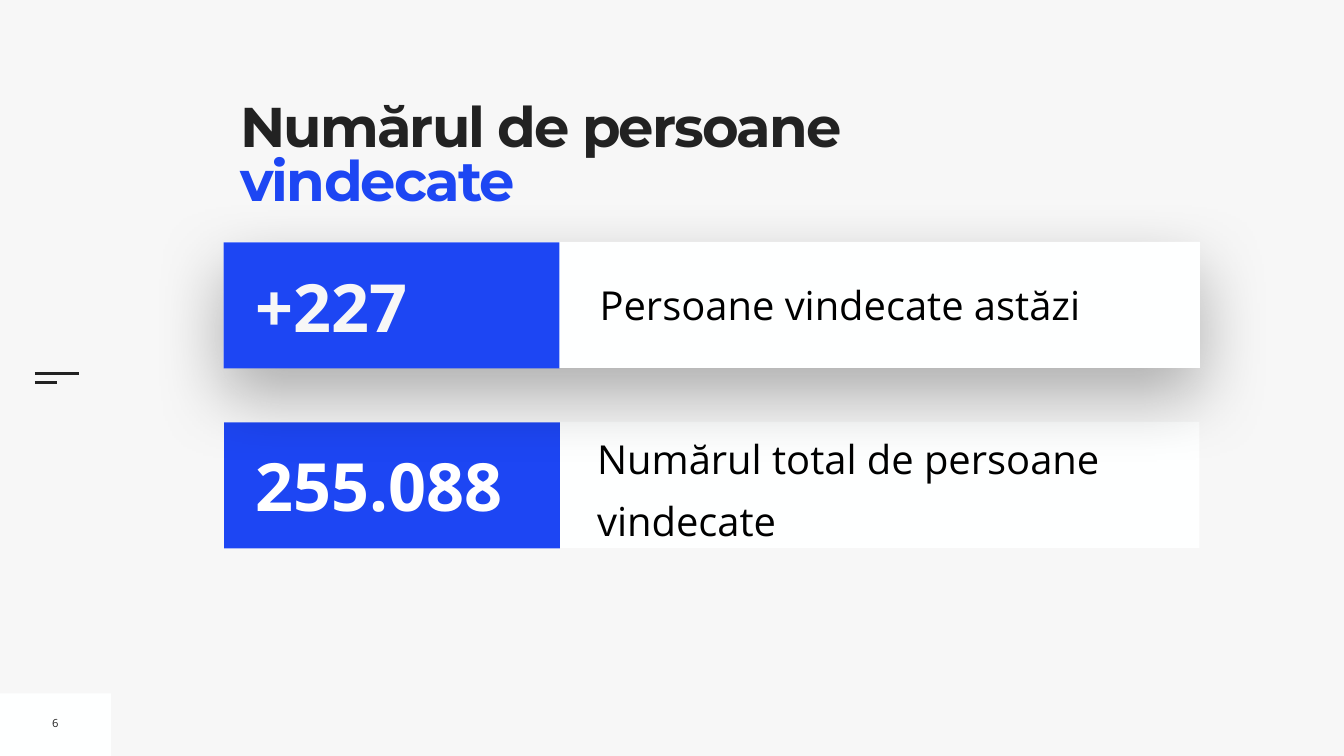
from lxml.etree import SubElement
from pptx import Presentation
from pptx.dml.color import RGBColor
from pptx.enum.shapes import MSO_CONNECTOR, MSO_SHAPE
from pptx.enum.text import MSO_ANCHOR, PP_ALIGN
from pptx.oxml.ns import qn
from pptx.util import Inches, Pt

COLORS = {
    "background": "F7F7F7",
    "white": "FFFFFF",
    "card": "FEFFFF",
    "accent": "1D46F3",
    "dark": "222222",
    "black": "000000",
}


def color(name):
    return RGBColor.from_string(COLORS[name])


def write_text(frame, runs, size, font="Open Sans", bold=False, align=PP_ALIGN.LEFT,
               anchor=MSO_ANCHOR.MIDDLE, inset=0.1, wrap=True, line_spacing=None,
               space_before=None, letter_spacing=None):
    """Fill a text frame with (text, colour name) runs in one format."""
    frame.word_wrap = wrap
    frame.vertical_anchor = anchor
    frame.margin_left = frame.margin_right = Inches(inset)
    frame.margin_top = frame.margin_bottom = Inches(inset)
    paragraph = frame.paragraphs[0]
    paragraph.alignment = align
    if line_spacing:
        paragraph.line_spacing = line_spacing
    if space_before:
        paragraph.space_before = Pt(space_before)
    for text, color_name in runs:
        run = paragraph.add_run()
        run.text = text
        run.font.name = font
        run.font.size = Pt(size)
        run.font.bold = bold
        run.font.color.rgb = color(color_name)
        if letter_spacing:
            run._r.get_or_add_rPr().set("spc", str(round(letter_spacing * 100)))


class SlideBuilder:
    """Draws the elements of the report on the current slide."""

    def __init__(self, slide):
        self.slide = slide
        fill = slide.background.fill
        fill.solid()
        fill.fore_color.rgb = color("background")

    def box(self, left, top, width, height, fill, shadow=False):
        """Add a borderless rectangle, with a soft shadow on request."""
        shape = self.slide.shapes.add_shape(
            MSO_SHAPE.RECTANGLE, Inches(left), Inches(top), Inches(width), Inches(height))
        shape.shadow.inherit = False
        shape.fill.solid()
        shape.fill.fore_color.rgb = color(fill)
        shape.line.fill.background()
        if shadow:
            effects = shape._element.spPr.find(qn("a:effectLst"))
            outer = SubElement(effects, qn("a:outerShdw"), blurRad=str(Pt(100)),
                               dist=str(Pt(40)), dir="5400000", rotWithShape="0")
            shade = SubElement(outer, qn("a:srgbClr"), val=COLORS["black"])
            SubElement(shade, qn("a:alpha"), val="30000")
        return shape

    def text(self, left, top, width, height, runs, size, **style):
        """Add a text box."""
        shape = self.slide.shapes.add_textbox(
            Inches(left), Inches(top), Inches(width), Inches(height))
        write_text(shape.text_frame, runs, size, **style)

    def rule(self, left, top, length):
        """Add a horizontal line."""
        line = self.slide.shapes.add_connector(
            MSO_CONNECTOR.STRAIGHT, Inches(left), Inches(top), Inches(left + length), Inches(top))
        line.line.color.rgb = color("dark")
        line.line.width = Pt(3)
        SubElement(line._element.spPr, qn("a:effectLst"))

    def title(self, runs):
        """Add the filled title block."""
        shape = self.box(4.77, 2.07, 13.01, 2.73, "background")
        write_text(shape.text_frame, runs, 80, font="Montserrat", bold=True, inset=0,
                   anchor=MSO_ANCHOR.TOP, line_spacing=0.8, letter_spacing=-2.7)

    def card(self, left, top, width, value, value_color, label, label_area,
             shadow=False, **label_style):
        """Add a white card with a value on the accent panel and a label."""
        self.box(left, top, width, 2.5, "card", shadow)
        self.text(*label_area, [(label, "black")], 57, **label_style)
        self.box(left, top + 0.01, 6.66, 2.5, "accent")
        self.text(left + 0.53, top + 0.36, 6.03, 1.8, [(value, value_color)], 95, bold=True)


def main():
    presentation = Presentation()
    presentation.slide_width = Inches(26.67)
    presentation.slide_height = Inches(15)
    builder = SlideBuilder(presentation.slides.add_slide(presentation.slide_layouts[6]))

    builder.box(0, 13.76, 2.2, 1.24, "card")
    builder.rule(0.69, 7.41, 0.88)
    builder.rule(0.69, 7.59, 0.44)
    builder.title([("Numărul de persoane ", "dark"), ("vindecate", "accent")])
    builder.text(0.93, 14.09, 0.34, 0.51, [("6", "dark")], 16,
                 align=PP_ALIGN.CENTER, wrap=False)
    builder.card(4.45, 8.37, 19.35, "255.088", "white",
                 "Numărul total de persoane vindecate", (11.85, 8.39, 11.95, 2.36),
                 inset=0, line_spacing=1.3, space_before=20)
    builder.card(4.44, 4.8, 19.37, "+227", "background",
                 "Persoane vindecate astăzi", (11.8, 5.47, 11.76, 1.16), shadow=True)
    presentation.save("out.pptx")


if __name__ == "__main__":
    main()
